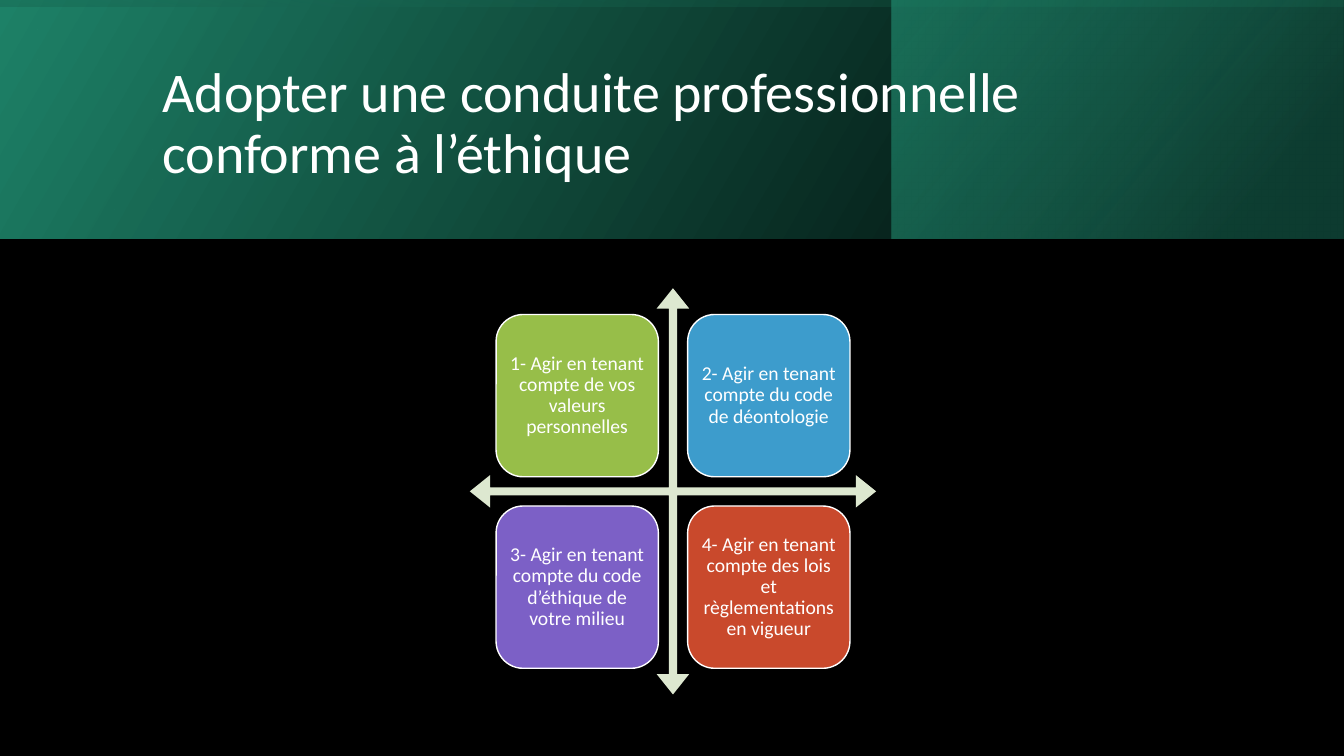
"""Build the slide on professional conduct with its four-way diagram."""
from dataclasses import dataclass

from lxml import etree
from pptx import Presentation
from pptx.dml.color import RGBColor
from pptx.enum.shapes import MSO_SHAPE
from pptx.enum.text import MSO_ANCHOR, MSO_AUTO_SIZE, PP_ALIGN
from pptx.oxml.ns import qn
from pptx.util import Inches, Pt

RECTANGLE = MSO_SHAPE.RECTANGLE
ROUNDED = MSO_SHAPE.ROUNDED_RECTANGLE
QUAD_ARROW = MSO_SHAPE.QUAD_ARROW
MIDDLE = MSO_ANCHOR.MIDDLE
NO_AUTOFIT = MSO_AUTO_SIZE.NONE
LEFT, CENTER = PP_ALIGN.LEFT, PP_ALIGN.CENTER

SLIDE_WIDTH, SLIDE_HEIGHT = 13.33, 7.5
BAND_HEIGHT = 2.37
CARD_LEFT, CARD_TOP, CARD_SIZE, CARD_STEP = 4.92, 3.12, 1.61, 1.9
CARD_INSET = 0.06
FONT = "Calibri"
COLORS = {
    "black": "000000",
    "white": "FFFFFF",
    "teal": "1F8369",
    "deep_teal": "155746",
    "light_teal": "29AF8C",
    "arrow": "DDE8D0",
    "green": "97BE49",
    "blue": "3D9CCC",
    "purple": "7C60C6",
    "red": "C9492C",
}


@dataclass(frozen=True)
class Stop:
    """A gradient stop with position and opacity in percent."""
    position: int
    color: str
    opacity: int


@dataclass(frozen=True)
class Band:
    """A gradient rectangle of the header."""
    box: tuple[float, float, float, float]
    stops: tuple[Stop, Stop]
    angle: int
    rotation: int = 0


@dataclass(frozen=True)
class Card:
    """A rounded card of the diagram."""
    text: str
    color: str


BANDS = (
    Band((0, 0, SLIDE_WIDTH, BAND_HEIGHT),
         (Stop(0, "black", 96), Stop(100, "teal", 100)), 330),
    Band((8.84, 0, 4.48, BAND_HEIGHT),
         (Stop(19, "deep_teal", 68), Stop(100, "light_teal", 48)), 320),
    Band((5.48, -5.48, BAND_HEIGHT, SLIDE_WIDTH),
         (Stop(23, "teal", 16), Stop(99, "black", 45)), 350, 270),
)
CARDS = (
    Card("1- Agir en tenant compte de vos valeurs personnelles", "green"),
    Card("2- Agir en tenant compte du code de déontologie", "blue"),
    Card("3- Agir en tenant compte du code d’éthique de votre milieu", "purple"),
    Card("4- Agir en tenant compte des lois et règlementations en vigueur", "red"),
)


def rgb(name: str) -> RGBColor:
    """Return the named colour."""
    return RGBColor.from_string(COLORS[name])


def apply_format(target, values: dict) -> None:
    """Set each format value as an attribute of the target."""
    for name, value in values.items():
        setattr(target, name, value)


def write_text(shape, text: str, size: int, alignment, inset: dict) -> None:
    """Fill a shape with one formatted paragraph."""
    frame = shape.text_frame
    frame.text = text
    apply_format(frame, {"word_wrap": True, "auto_size": NO_AUTOFIT,
                         "vertical_anchor": MIDDLE, **inset})
    paragraph = frame.paragraphs[0]
    apply_format(paragraph, {"alignment": alignment, "line_spacing": 0.9})
    font = paragraph.runs[0].font
    apply_format(font, {"name": FONT, "size": Pt(size)})
    font.color.rgb = rgb("white")


def add_plain_shape(slide, kind, box: tuple[float, float, float, float]):
    """Add a preset shape without shadow or outline."""
    shape = slide.shapes.add_shape(kind, *map(Inches, box))
    shape.shadow.inherit = False
    shape.line.fill.background()
    return shape


def add_band(slide, band: Band) -> None:
    """Add a mirrored gradient rectangle behind the title."""
    shape = add_plain_shape(slide, RECTANGLE, band.box)
    shape.rotation = band.rotation
    properties = shape.element.spPr
    properties.find(qn("a:xfrm")).set("flipH", "1")
    gradient = etree.Element(qn("a:gradFill"), rotWithShape="1")
    stops = etree.SubElement(gradient, qn("a:gsLst"))
    for stop in band.stops:
        entry = etree.SubElement(stops, qn("a:gs"), pos=str(stop.position * 1000))
        color = etree.SubElement(entry, qn("a:srgbClr"), val=COLORS[stop.color])
        etree.SubElement(color, qn("a:alpha"), val=str(stop.opacity * 1000))
    etree.SubElement(gradient, qn("a:lin"), ang=str(band.angle * 60000), scaled="0")
    properties.find(qn("a:prstGeom")).addnext(gradient)
    slide.shapes.title.element.addprevious(shape.element)


def add_title(slide) -> None:
    """Place and format the title."""
    title = slide.shapes.title
    apply_format(title, {"left": Inches(1.51), "top": Inches(0.38),
                         "width": Inches(10.63), "height": Inches(1.72)})
    write_text(title, "Adopter une conduite professionnelle conforme à l’éthique",
               40, LEFT, {})


def add_arrows(slide) -> None:
    """Add the four-way arrow between the cards."""
    arrows = add_plain_shape(slide, QUAD_ARROW, (4.66, 2.86, 4.03, 4.03))
    for index, value in enumerate((0.02, 0.04, 0.05)):
        arrows.adjustments[index] = value
    arrows.fill.solid()
    arrows.fill.fore_color.rgb = rgb("arrow")


def add_card(slide, index: int, card: Card) -> None:
    """Add a card at its place in the two-by-two grid."""
    row, column = divmod(index, 2)
    shape = add_plain_shape(slide, ROUNDED, (
        CARD_LEFT + column * CARD_STEP, CARD_TOP + row * CARD_STEP,
        CARD_SIZE, CARD_SIZE))
    shape.fill.solid()
    shape.fill.fore_color.rgb = rgb(card.color)
    shape.line.color.rgb = rgb("white")
    shape.line.width = Pt(1)
    inset = {f"margin_{side}": Inches(CARD_INSET)
             for side in ("left", "top", "right", "bottom")}
    write_text(shape, card.text, 14, CENTER, inset)


def main() -> None:
    """Build and save the presentation."""
    presentation = Presentation()
    presentation.slide_width = Inches(SLIDE_WIDTH)
    presentation.slide_height = Inches(SLIDE_HEIGHT)
    slide = presentation.slides.add_slide(presentation.slide_layouts[5])
    background = slide.background.fill
    background.solid()
    background.fore_color.rgb = rgb("black")
    for band in BANDS:
        add_band(slide, band)
    add_title(slide)
    add_arrows(slide)
    for index, card in enumerate(CARDS):
        add_card(slide, index, card)
    presentation.save("out.pptx")


if __name__ == "__main__":
    main()
